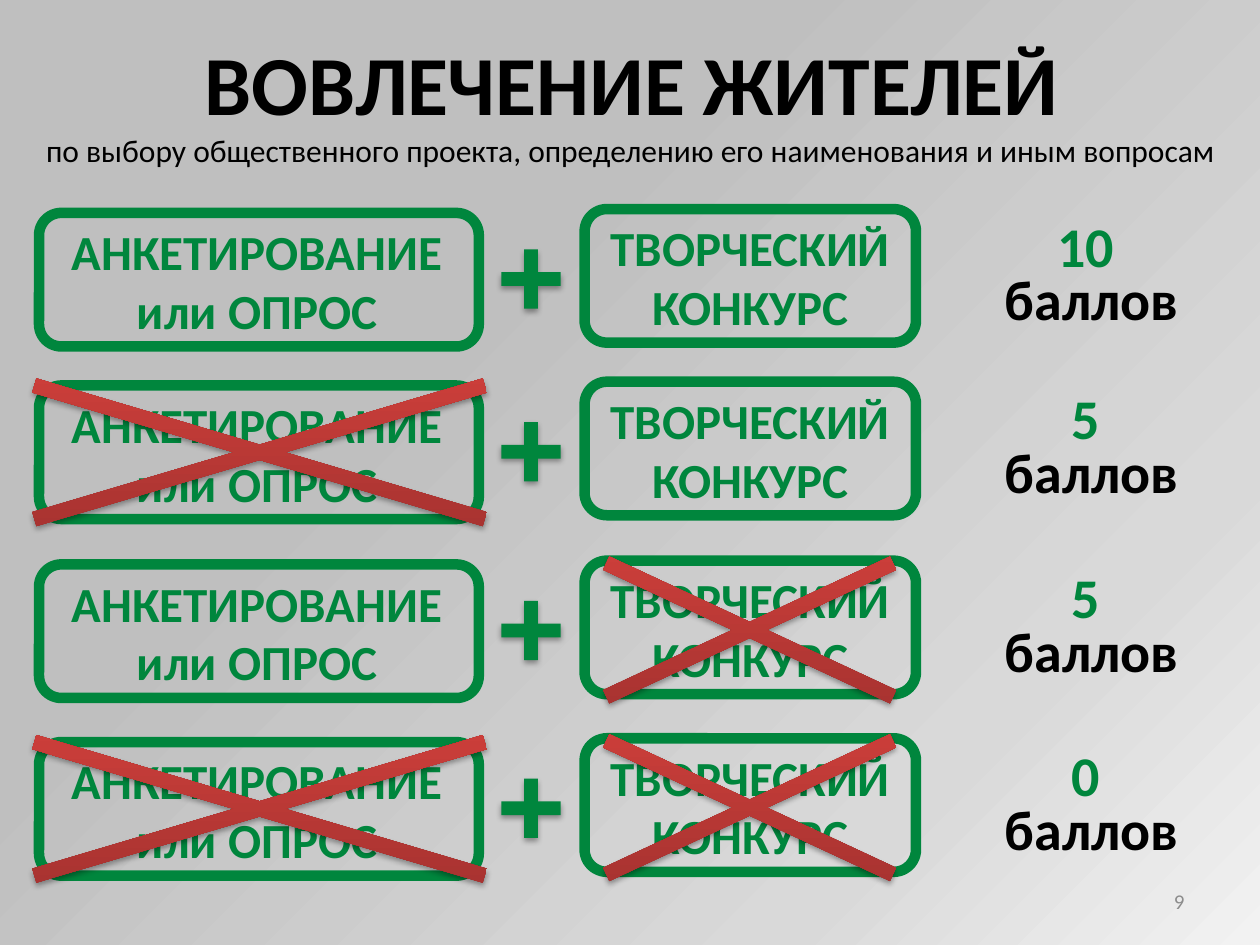
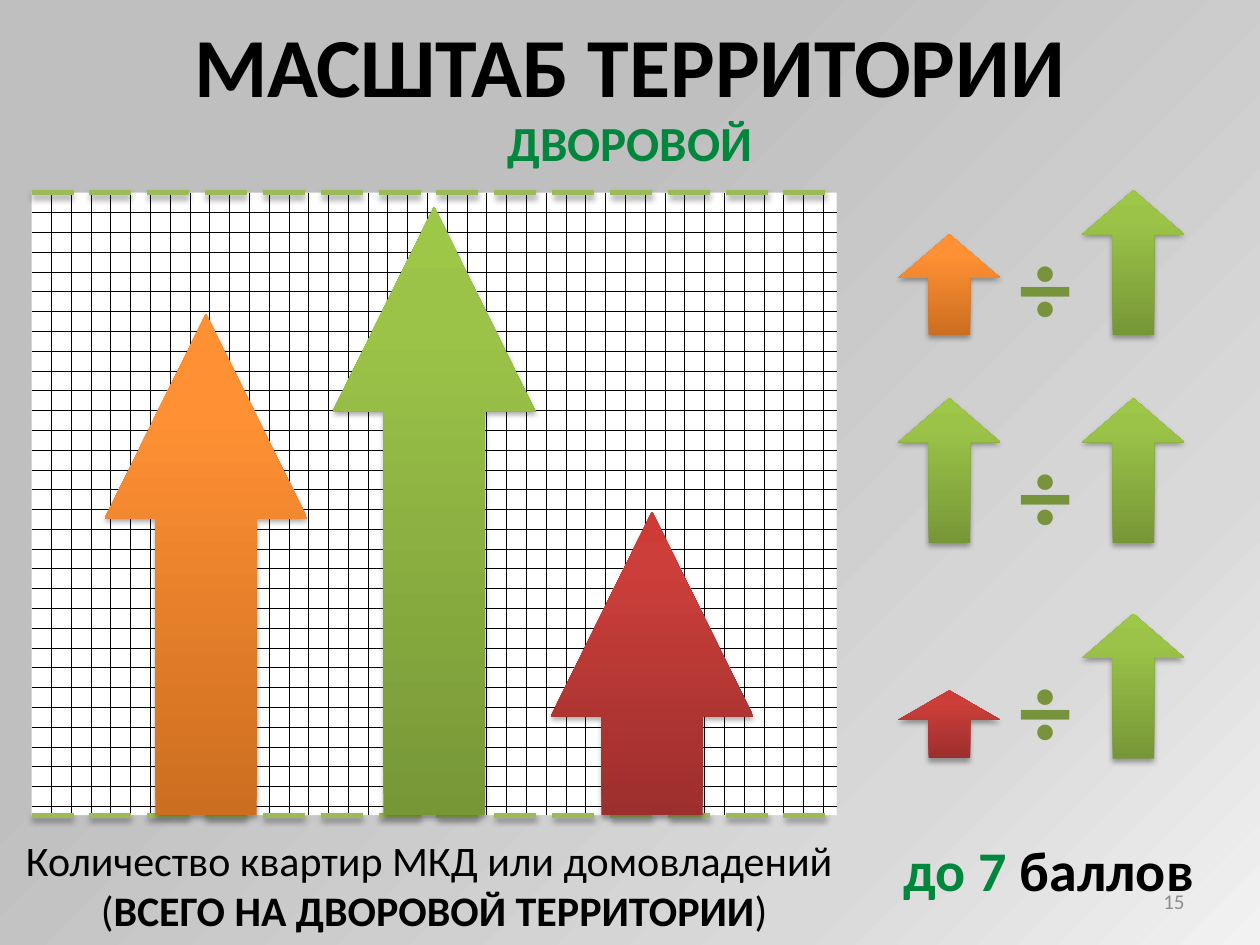
from dataclasses import dataclass

from lxml.etree import SubElement
from pptx import Presentation
from pptx.dml.color import RGBColor
from pptx.enum.dml import MSO_LINE, MSO_PATTERN
from pptx.enum.shapes import MSO_CONNECTOR, MSO_SHAPE
from pptx.enum.text import MSO_ANCHOR, MSO_AUTO_SIZE, PP_ALIGN
from pptx.oxml import parse_xml
from pptx.oxml.ns import nsdecls, qn
from pptx.util import Inches, Pt


@dataclass(frozen=True)
class Theme:
    font: str = "Calibri"
    black: str = "000000"
    white: str = "FFFFFF"
    green: str = "00863D"
    olive: str = "77933C"
    dash: str = "9BBB59"
    gray: str = "8C8C8C"
    background: tuple = ((0, "F2F2F2"), (22, "D9D9D9"), (65, "BFBFBF"))
    red_fill: tuple = ((0, "9C2F2D"), (80, "CB3E3A"), (100, "CE3B37"))
    orange_fill: tuple = ((0, "CC6E20"), (80, "FF9034"), (100, "FF9136"))
    green_fill: tuple = ((0, "779737"), (80, "9BC348"), (100, "9DC746"))
    title: int = 48
    sign: int = 60
    score: int = 32
    heading: int = 28
    caption: int = 24
    subtitle: int = 18
    number: int = 12


UPWARD = '<a:lin ang="16200000" scaled="0"/>'
FROM_CORNER = '<a:path path="circle"><a:fillToRect l="100000" t="100000"/></a:path>'


def set_gradient(fill, parent, stops, direction):
    fill.solid()
    stop_list = "".join(
        f'<a:gs pos="{position * 1000}"><a:srgbClr val="{color}"/></a:gs>'
        for position, color in stops
    )
    gradient = parse_xml(
        f'<a:gradFill {nsdecls("a")} rotWithShape="1">'
        f"<a:gsLst>{stop_list}</a:gsLst>{direction}</a:gradFill>"
    )
    parent.replace(parent.find(qn("a:solidFill")), gradient)


class Deck:
    def __init__(self, theme):
        self.theme = theme
        self.presentation = Presentation()
        self.presentation.slide_width = Inches(10)
        self.presentation.slide_height = Inches(7.5)
        self.slide = None
        master = self.presentation.slide_master
        fill = master.background.fill
        fill.solid()
        properties = master.element.find(".//" + qn("p:bgPr"))
        set_gradient(fill, properties, theme.background, FROM_CORNER)

    def add_slide(self, number):
        self.slide = self.presentation.slides.add_slide(self.presentation.slide_layouts[6])
        self.text(7.17, 6.95, 2.33, 0.4, str(number), self.theme.number, self.theme.gray,
                  bold=False, align=PP_ALIGN.RIGHT, anchor=MSO_ANCHOR.MIDDLE)

    def format_run(self, run, size, color, bold):
        run.font.name = self.theme.font
        run.font.size = Pt(size)
        run.font.bold = bold
        run.font.color.rgb = RGBColor.from_string(color)

    def add_run(self, paragraph, text, size, color, bold=True):
        run = paragraph.add_run()
        run.text = text
        self.format_run(run, size, color, bold)

    def text(self, left, top, width, height, text, size, color, bold=True,
             align=PP_ALIGN.CENTER, anchor=MSO_ANCHOR.TOP, wrap=True, spacing=None):
        box = self.slide.shapes.add_textbox(
            Inches(left), Inches(top), Inches(width), Inches(height))
        text_frame = box.text_frame
        text_frame.text = text
        text_frame.word_wrap = wrap
        text_frame.vertical_anchor = anchor
        text_frame.auto_size = MSO_AUTO_SIZE.SHAPE_TO_FIT_TEXT
        for paragraph in text_frame.paragraphs:
            paragraph.alignment = align
            paragraph.line_spacing = spacing
            for run in paragraph.runs:
                self.format_run(run, size, color, bold)
        return text_frame.paragraphs

    def title(self, left, top, width, height, text, spacing=None):
        self.text(left, top, width, height, text, self.theme.title, self.theme.black,
                  wrap=False, spacing=spacing)

    def shape(self, kind, left, top, width, height, adjustments=()):
        shape = self.slide.shapes.add_shape(
            kind, Inches(left), Inches(top), Inches(width), Inches(height))
        shape.shadow.inherit = False
        shape.line.fill.background()
        for index, value in enumerate(adjustments):
            shape.adjustments[index] = value
        return shape

    def drop_shadow(self, shape):
        properties = shape.element.spPr
        effects = properties.find(qn("a:effectLst"))
        if effects is None:
            effects = SubElement(properties, qn("a:effectLst"))
        effects.append(parse_xml(
            f'<a:outerShdw {nsdecls("a")} blurRad="40000" dist="23000" dir="5400000" '
            f'rotWithShape="0"><a:srgbClr val="{self.theme.black}">'
            '<a:alpha val="35000"/></a:srgbClr></a:outerShdw>'
        ))

    def frame(self, left, top, width, height):
        shape = self.shape(MSO_SHAPE.ROUNDED_RECTANGLE, left, top, width, height)
        shape.fill.background()
        shape.line.color.rgb = RGBColor.from_string(self.theme.green)
        shape.line.width = Pt(6)

    def plus(self, left, top, size):
        shape = self.shape(MSO_SHAPE.CROSS, left, top, size, size, [0.384])
        shape.fill.solid()
        shape.fill.fore_color.rgb = RGBColor.from_string(self.theme.green)
        self.drop_shadow(shape)

    def glossy(self, kind, left, top, width, height, stops, adjustments):
        shape = self.shape(kind, left, top, width, height, adjustments)
        set_gradient(shape.fill, shape.element.spPr, stops, UPWARD)
        self.drop_shadow(shape)

    def cross_out(self, left, top, width, height):
        self.glossy(MSO_SHAPE.MATH_MULTIPLY, left, top, width, height,
                    self.theme.red_fill, [0.057])

    def arrow(self, left, bottom, width, height, stops, adjustments):
        self.glossy(MSO_SHAPE.UP_ARROW, left, bottom - height, width, height,
                    stops, adjustments)

    def grid(self, left, top, width, height):
        fill = self.shape(MSO_SHAPE.RECTANGLE, left, top, width, height).fill
        fill.patterned()
        fill.pattern = MSO_PATTERN.DOTTED_GRID
        fill.fore_color.rgb = RGBColor.from_string(self.theme.black)
        fill.back_color.rgb = RGBColor.from_string(self.theme.white)

    def dashed_line(self, left, right, height):
        connector = self.slide.shapes.add_connector(
            MSO_CONNECTOR.STRAIGHT, Inches(left), Inches(height), Inches(right), Inches(height))
        connector.line.color.rgb = RGBColor.from_string(self.theme.dash)
        connector.line.width = Pt(3)
        connector.line.dash_style = MSO_LINE.LONG_DASH
        self.drop_shadow(connector)


def build_involvement(deck):
    theme = deck.theme
    deck.add_slide(9)
    deck.title(1.49, 0.2, 7.05, 0.91, "ВОВЛЕЧЕНИЕ ЖИТЕЛЕЙ")
    deck.text(0.2, 0.99, 9.61, 0.4,
              "по выбору общественного проекта, определению его наименования и иным вопросам",
              theme.subtitle, theme.black, bold=False)
    rows = [
        (1.69, 10, True, True),
        (3.06, 5, False, True),
        (4.48, 5, True, False),
        (5.89, 0, False, False),
    ]
    for top, points, has_survey, has_contest in rows:
        score = deck.text(7.84, top + 0.04, 1.65, 0.97, f"{points} \nбаллов",
                          theme.score, theme.green, spacing=0.8)
        score[1].runs[0].font.color.rgb = RGBColor.from_string(theme.black)
        deck.text(0.31, top + 0.02, 3.46, 1.04, "АНКЕТИРОВАНИЕ или ОПРОС",
                  theme.heading, theme.green)
        deck.text(4.64, top - 0.01, 2.63, 1.04, "ТВОРЧЕСКИЙ КОНКУРС",
                  theme.heading, theme.green)
        deck.frame(0.31, top, 3.49, 1.06)
        deck.frame(4.64, top - 0.03, 2.63, 1.06)
        deck.plus(3.98, top + 0.29, 0.47)
        if not has_contest:
            deck.cross_out(3.76, top - 0.5, 4.38, 2.04)
        if not has_survey:
            deck.cross_out(-1.38, top - 0.49, 6.88, 2.04)


def build_scale(deck):
    theme = deck.theme
    deck.add_slide(15)
    grid_top, grid_bottom = 1.53, 6.47
    deck.grid(0.25, grid_top, 6.39, grid_bottom - grid_top)
    for height in (grid_bottom, grid_top):
        deck.dashed_line(0.25, 6.65, height)
    deck.title(1.41, 0.21, 7.18, 0.75, "МАСШТАБ ТЕРРИТОРИИ", spacing=0.8)
    deck.text(3.62, 0.84, 2.76, 0.57, "ДВОРОВОЙ", theme.heading, theme.green)

    bars = [
        (0.83, 3.98, theme.orange_fill),
        (2.64, 4.83, theme.green_fill),
        (4.37, 2.41, theme.red_fill),
    ]
    for left, height, stops in bars:
        deck.arrow(left, grid_bottom, 1.61, height, stops, [0.5, 1.01])

    ratios = [
        (2.66, 0.8, theme.orange_fill),
        (4.31, 1.15, theme.green_fill),
        (6.02, 0.54, theme.red_fill),
    ]
    for bottom, height, stops in ratios:
        deck.arrow(7.13, bottom, 0.81, height, stops, [0.408, 0.432])
        deck.arrow(8.59, bottom, 0.81, 1.15, theme.green_fill, [0.408, 0.432])
        deck.text(7.99, bottom - 0.96, 0.68, 1.11, "÷", theme.sign, theme.olive,
                  align=PP_ALIGN.LEFT)

    score = deck.text(6.81, 6.58, 3.03, 0.64, "до 7 ", theme.score, theme.green)
    deck.add_run(score[0], "баллов", theme.score, theme.black)
    caption = deck.text(0.04, 6.57, 6.81, 0.91,
                        "Количество квартир МКД или домовладений \n(",
                        theme.caption, theme.black, bold=False)
    deck.add_run(caption[1], "ВСЕГО НА ДВОРОВОЙ ТЕРРИТОРИИ", theme.caption, theme.black)
    deck.add_run(caption[1], ")", theme.caption, theme.black, bold=False)


def main():
    deck = Deck(Theme())
    build_involvement(deck)
    build_scale(deck)
    deck.presentation.save("out.pptx")


if __name__ == "__main__":
    main()
